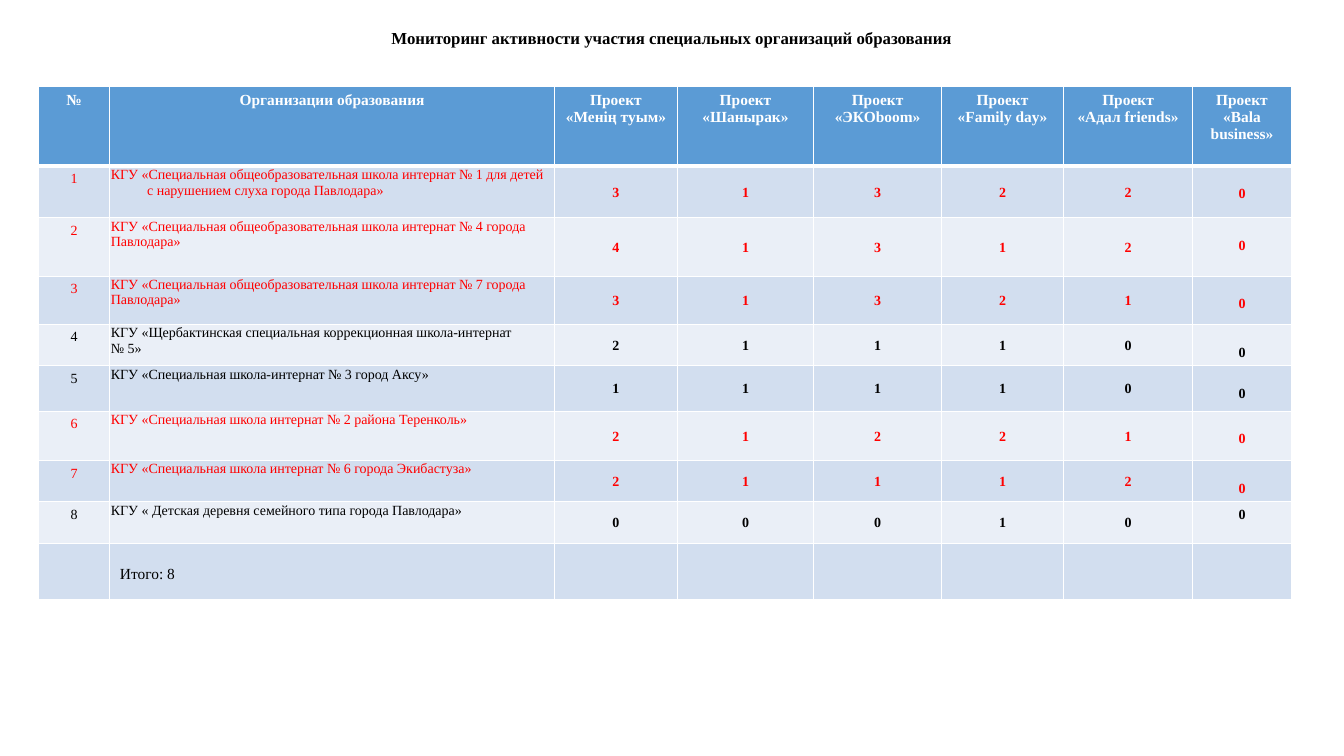
from dataclasses import dataclass

from lxml.etree import SubElement
from pptx import Presentation
from pptx.dml.color import RGBColor
from pptx.enum.text import MSO_ANCHOR, PP_ALIGN
from pptx.oxml.ns import qn
from pptx.util import Inches, Pt

FACE = "Times New Roman"
WHITE, BLACK, RED = "FFFFFF", "000000", "FF0000"
BLUE, DARK, LIGHT = "5B9BD5", "D2DEEF", "EAEFF7"
THIN, THICK = 1, 3
WIDTHS = [0.71, 4.41, 1.22, 1.35, 1.27, 1.21, 1.28, 0.98]
HEIGHTS = [0.79, 0.51, 0.58, 0.48, 0.41, 0.45, 0.49, 0.41, 0.41, 0.56]
HEADS = [
    "№",
    "Организации образования",
    "Проект\n«Менің туым»",
    "Проект «Шанырак»",
    "Проект «ЭКОboom»",
    "Проект\n«Family day»",
    "Проект\n«Адал friends»",
    "Проект\n«Bala business»",
]


@dataclass
class Look:
    size: float = 10
    bold: bool = False
    align: PP_ALIGN = PP_ALIGN.CENTER
    anchor: MSO_ANCHOR = MSO_ANCHOR.TOP
    side: float = 0.1
    top: float = 0.05
    base: float = 0.05


@dataclass
class School:
    name: str
    marks: str
    color: str = RED
    drop: float = 0.2
    hang: float = 0


HEAD = Look(size=11, bold=True)
COUNT = Look()
NAME = Look(align=PP_ALIGN.LEFT, side=0.01, top=0.01, base=0)
MARK = Look(bold=True, anchor=MSO_ANCHOR.MIDDLE, side=0.01, top=0.01, base=0)
TOTAL = Look(size=11, align=PP_ALIGN.LEFT, top=0.22)
TITLE = Look(size=12, bold=True, anchor=MSO_ANCHOR.MIDDLE, top=0.23)

SCHOOLS = [
    School("КГУ «Специальная общеобразовательная школа интернат № 1 для детей\v"
           "с нарушением слуха города Павлодара»", "313220", hang=0.36),
    School("КГУ «Специальная общеобразовательная школа интернат № 4 города Павлодара»", "413120"),
    School("КГУ «Специальная общеобразовательная школа интернат № 7 города Павлодара»", "313210"),
    School("КГУ «Щербактинская специальная коррекционная школа-интернат\v№ 5»", "211100", BLACK),
    School("КГУ «Специальная школа-интернат № 3 город Аксу»", "111100", BLACK),
    School("КГУ «Специальная школа интернат № 2 района Теренколь»", "212210"),
    School("КГУ «Специальная школа интернат № 6 города Экибастуза»", "211120"),
    School("КГУ « Детская деревня семейного типа города Павлодара»", "000100", BLACK, drop=0.05),
]


def paint(target, color: str) -> None:
    target.rgb = RGBColor.from_string(color)


def apply(target, values: dict) -> None:
    for key, value in values.items():
        setattr(target, key, value)


def write(frame, box, text: str, look: Look, color: str, hang: float = 0) -> None:
    apply(box, {
        "vertical_anchor": look.anchor,
        "margin_left": Inches(look.side),
        "margin_right": Inches(look.side),
        "margin_top": Inches(look.top),
        "margin_bottom": Inches(look.base),
    })
    frame.text = text
    for para in frame.paragraphs:
        para.alignment = look.align
        if hang:
            props = para._p.get_or_add_pPr()
            props.set("marL", str(Inches(hang)))
            props.set("indent", str(-Inches(hang)))
        for run in para.runs:
            apply(run.font, {"name": FACE, "size": Pt(look.size), "bold": look.bold})
            paint(run.font.color, color)


def edge(cell, row: int) -> None:
    props = cell._tc.get_or_add_tcPr()
    sides = {"L": THIN, "R": THIN,
             "T": THICK if row == 1 else THIN,
             "B": THICK if row == 0 else THIN}
    for side, width in sides.items():
        line = SubElement(props, qn(f"a:ln{side}"), w=str(Pt(width)))
        fill = SubElement(line, qn("a:solidFill"))
        SubElement(fill, qn("a:srgbClr"), val=WHITE)


def put(cell, text: str, look: Look, color: str, hang: float = 0) -> None:
    write(cell.text_frame, cell, text, look, color, hang)


def build(slide) -> None:
    grid = slide.shapes.add_table(
        len(HEIGHTS), len(WIDTHS), Inches(0.38), Inches(0.86),
        Inches(sum(WIDTHS)), Inches(sum(HEIGHTS))).table
    for col, width in zip(grid.columns, WIDTHS):
        col.width = Inches(width)
    for row, height in enumerate(HEIGHTS):
        grid.rows[row].height = Inches(height)
        for cell in grid.rows[row].cells:
            edge(cell, row)
            cell.fill.solid()
            paint(cell.fill.fore_color, BLUE if row == 0 else DARK if row % 2 else LIGHT)
    for col, head in enumerate(HEADS):
        put(grid.cell(0, col), head, HEAD, WHITE)
    for row, school in enumerate(SCHOOLS, 1):
        put(grid.cell(row, 0), str(row), COUNT, school.color)
        put(grid.cell(row, 1), school.name, NAME, school.color, school.hang)
        last = Look(bold=True, top=school.drop)
        looks = [MARK] * 5 + [last]
        for col, (mark, look) in enumerate(zip(school.marks, looks), 2):
            put(grid.cell(row, col), mark, look, school.color)
    put(grid.cell(len(HEIGHTS) - 1, 1), f"Итого: {len(SCHOOLS)}", TOTAL, BLACK)


def main() -> None:
    deck = Presentation()
    apply(deck, {"slide_width": Inches(13.33), "slide_height": Inches(7.5)})
    slide = deck.slides.add_slide(deck.slide_layouts[5])
    title = slide.shapes.title
    apply(title, {"left": 0, "top": 0, "width": Inches(13.33), "height": Inches(0.59)})
    frame = title.text_frame
    write(frame, frame, "Мониторинг активности участия специальных организаций образования",
          TITLE, BLACK)
    frame.paragraphs[0].line_spacing = 0.9
    build(slide)
    deck.save("out.pptx")


if __name__ == "__main__":
    main()
